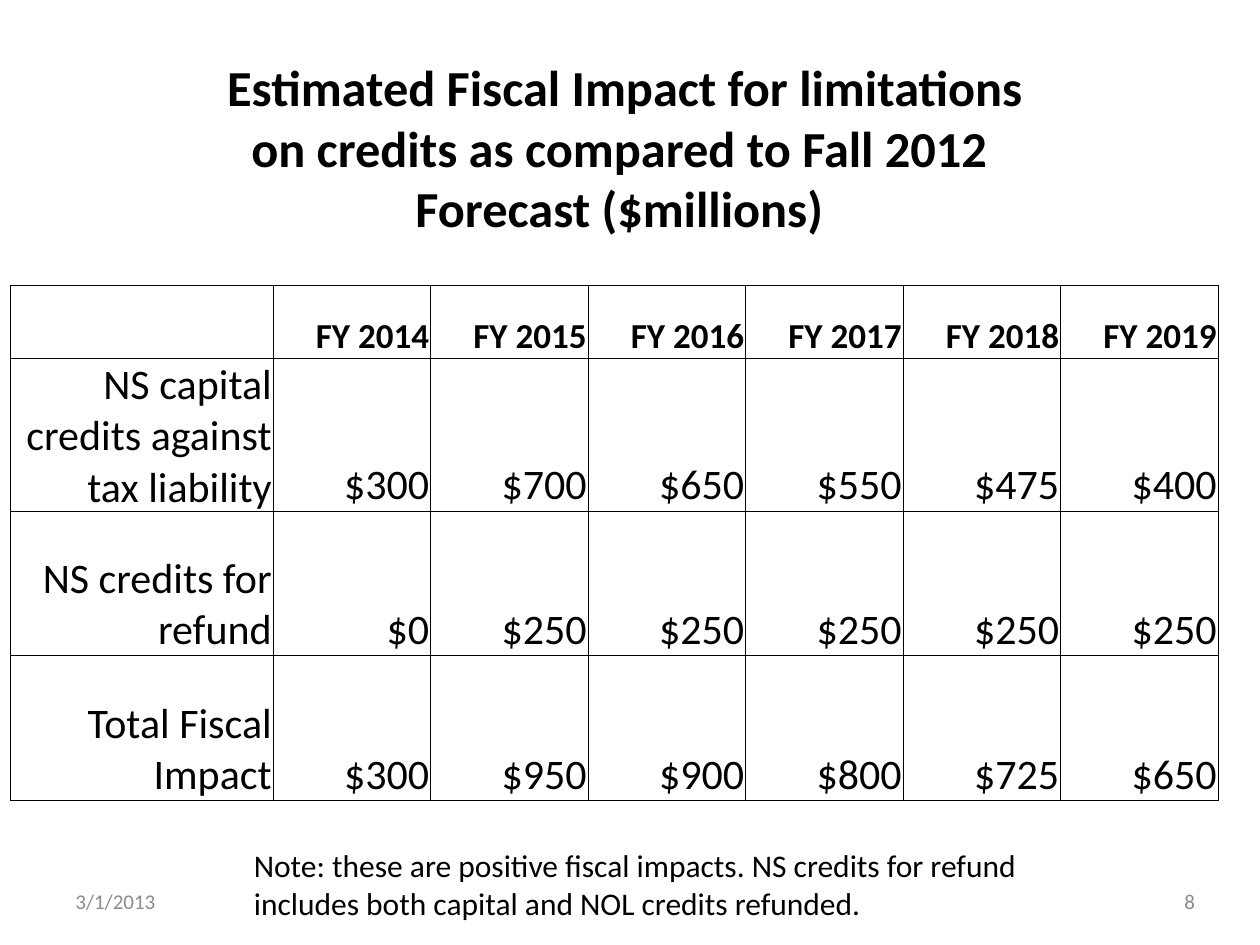
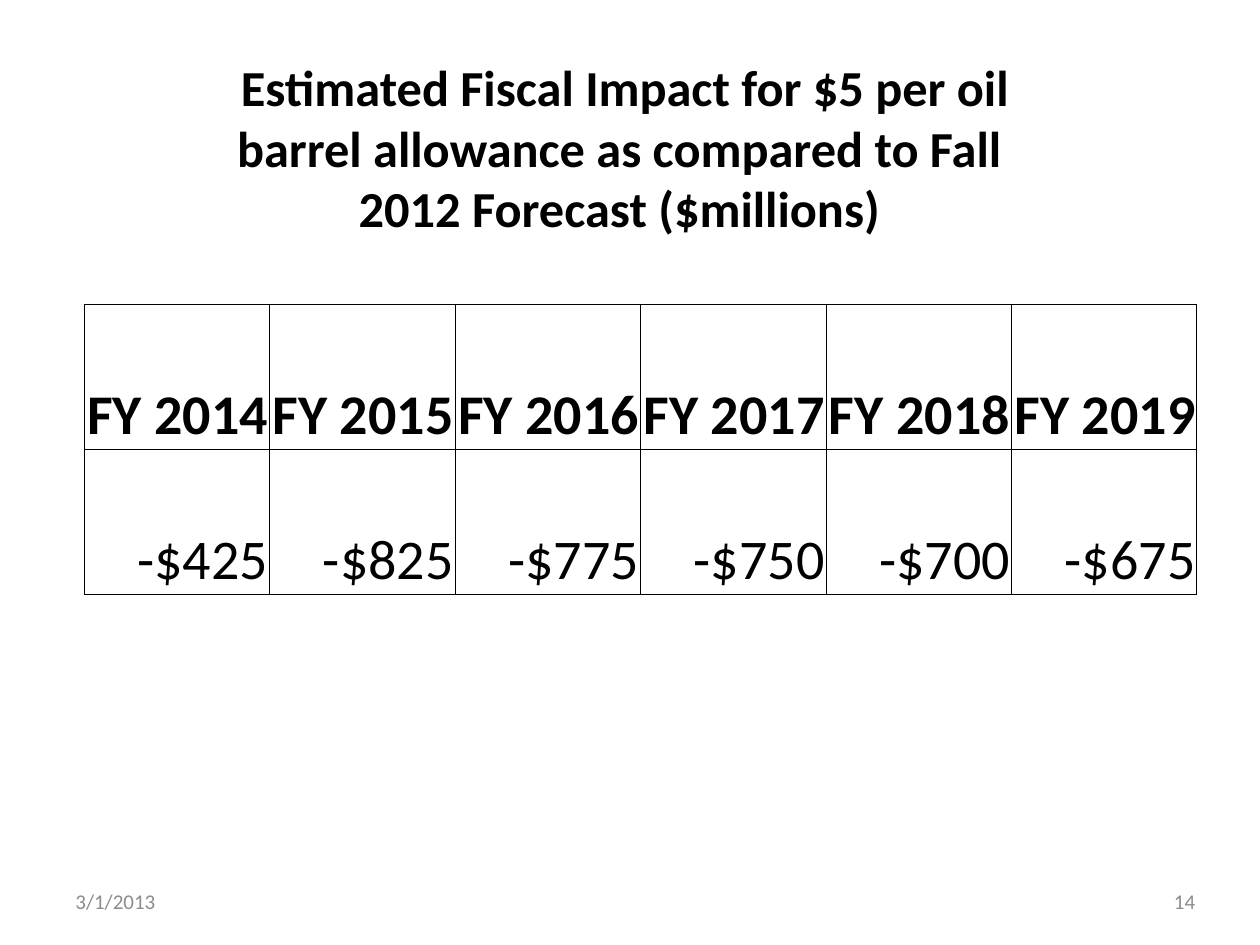
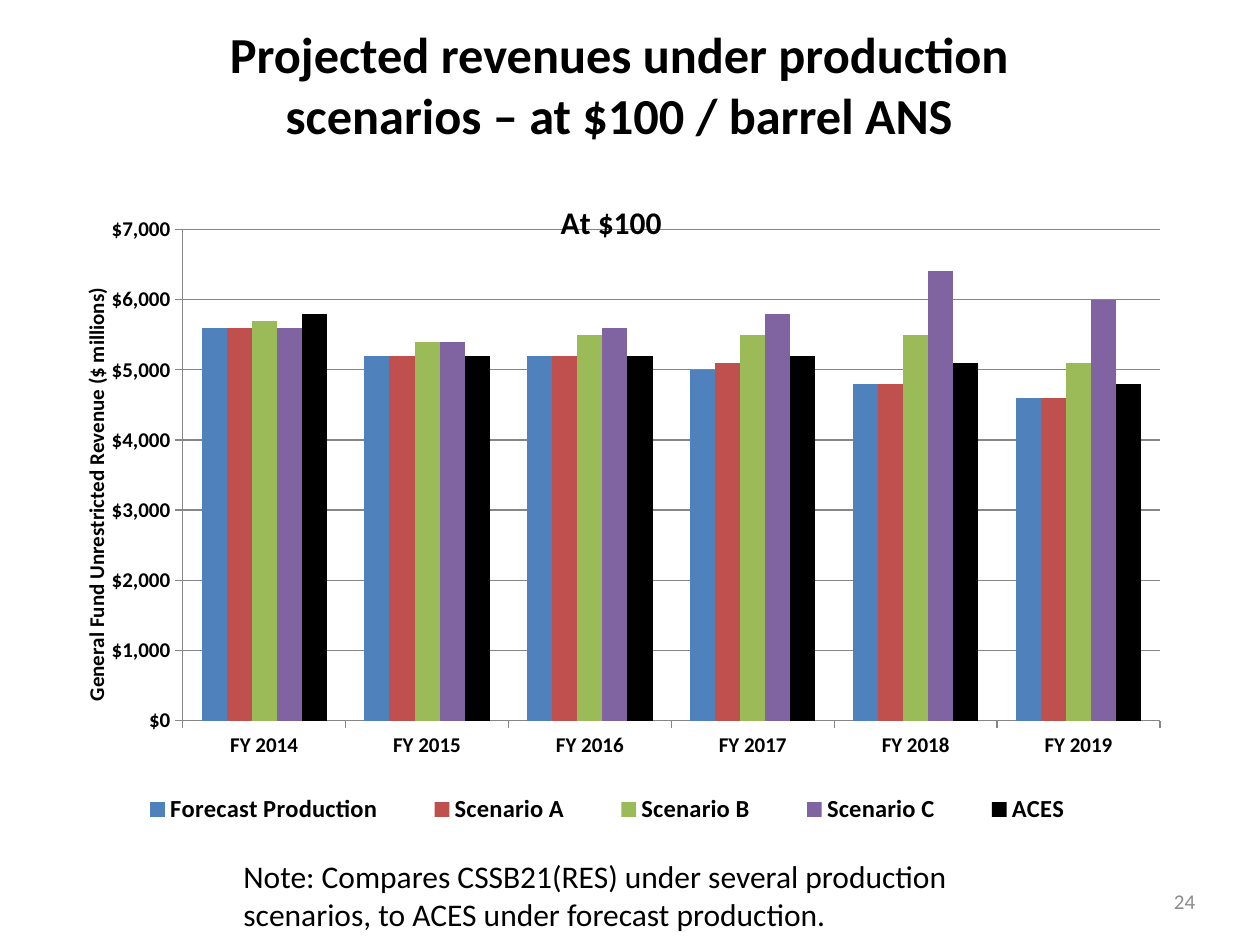
from dataclasses import dataclass

import lxml.etree
import pptx
import pptx.chart.data
import pptx.dml.color
import pptx.enum.chart
import pptx.enum.text
import pptx.oxml
import pptx.oxml.ns
import pptx.util

ALIGN = pptx.enum.text.PP_ALIGN
ANCHOR = pptx.enum.text.MSO_ANCHOR
qualify = pptx.oxml.ns.qn


@dataclass(frozen=True)
class Theme:
    font: str = "Calibri"
    ink: str = "000000"
    paper: str = "FFFFFF"
    muted: str = "8C8C8C"
    rule: str = "868686"
    series: tuple = ("4F81BD", "C0504D", "9BBB59", "8064A2", "000000")
    title: float = 28.8
    note: float = 18
    footer: float = 12
    chart_title: float = 18
    axis: float = 12
    legend: float = 14
    chart_base: float = 10
    border: float = 0.5


THEME = Theme()
COLUMNS, ROWS = 120, 90
WIDTH, HEIGHT = pptx.util.Inches(10), pptx.util.Inches(7.5)
YEARS = [f"FY {year}" for year in range(2014, 2020)]
DATE = "3/1/2013"
DATE_BOX = (6, 83.4, 28, 4.8)
NUMBER_BOX = (87, 83.4, 28, 4.8)


def across(columns):
    return int(WIDTH * columns / COLUMNS)


def down(rows):
    return int(HEIGHT * rows / ROWS)


def place(box):
    left, top, width, height = box
    return across(left), down(top), across(width), down(height)


def color(code):
    return pptx.dml.color.RGBColor.from_string(code)


def style_font(font, size, bold=False, code=THEME.ink):
    font.name = THEME.font
    font.size = pptx.util.Pt(size)
    font.bold = bold
    font.color.rgb = color(code)


def write(frame, text, size, bold=False, code=THEME.ink, align=ALIGN.LEFT):
    paragraph = frame.paragraphs[0]
    paragraph.alignment = align
    run = paragraph.add_run()
    run.text = text
    style_font(run.font, size, bold, code)


def add_text(slide, box, text, size, anchor=ANCHOR.TOP, **style):
    frame = slide.shapes.add_textbox(*place(box)).text_frame
    frame.word_wrap = True
    frame.vertical_anchor = anchor
    write(frame, text, size, **style)


def add_base_slide(presentation, title, title_top, number, date=None):
    slide = presentation.slides.add_slide(presentation.slide_layouts[6])
    add_text(slide, (18, title_top, 82, 10), title, THEME.title, ANCHOR.MIDDLE,
             bold=True, align=ALIGN.CENTER)
    if date:
        add_text(slide, DATE_BOX, date, THEME.footer, ANCHOR.MIDDLE, code=THEME.muted)
    add_text(slide, NUMBER_BOX, number, THEME.footer, ANCHOR.MIDDLE,
             code=THEME.muted, align=ALIGN.RIGHT)
    return slide


def add_borders(cell):
    properties = cell._tc.get_or_add_tcPr()
    for index, side in enumerate(("lnL", "lnR", "lnT", "lnB")):
        line = lxml.etree.Element(qualify(f"a:{side}"), w=str(pptx.util.Pt(THEME.border)))
        fill = lxml.etree.SubElement(line, qualify("a:solidFill"))
        lxml.etree.SubElement(fill, qualify("a:srgbClr"), val=THEME.ink)
        properties.insert(index, line)


def fill_cell(cell, text, size, bold):
    cell.fill.solid()
    cell.fill.fore_color.rgb = color(THEME.paper)
    add_borders(cell)
    if text:
        cell.vertical_anchor = ANCHOR.BOTTOM
        cell.margin_left = cell.margin_right = cell.margin_top = pptx.util.Inches(0.01)
        cell.margin_bottom = 0
        write(cell.text_frame, text, size, bold, align=ALIGN.RIGHT)


def add_impact_table(slide, left, top, widths, heights, records, header_size, body_size):
    box = (left, top, sum(widths), sum(heights))
    table = slide.shapes.add_table(len(heights), len(widths), *place(box)).table
    table.first_row = table.horz_banding = False
    for column, width in zip(table.columns, widths):
        column.width = across(width)
    for row, height in zip(table.rows, heights):
        row.height = down(height)
    for row_index, record in enumerate(records):
        header = row_index == 0
        for column_index, text in enumerate(record):
            fill_cell(table.cell(row_index, column_index), text,
                      header_size if header else body_size, header)


def set_layout(parent, position, **shares):
    old = parent.find(qualify("c:layout"))
    if old is not None:
        parent.remove(old)
    layout = lxml.etree.Element(qualify("c:layout"))
    manual = lxml.etree.SubElement(layout, qualify("c:manualLayout"))
    if "inner" in shares:
        lxml.etree.SubElement(manual, qualify("c:layoutTarget"), val=shares.pop("inner"))
    for mode in ("xMode", "yMode"):
        lxml.etree.SubElement(manual, qualify(f"c:{mode}"), val="edge")
    for name, share in shares.items():
        lxml.etree.SubElement(manual, qualify(f"c:{name}"), val=str(share))
    parent.insert(position, layout)


def style_axis(axis):
    style_font(axis.tick_labels.font, THEME.axis, True)
    axis.major_tick_mark = pptx.enum.chart.XL_TICK_MARK.OUTSIDE
    axis.format.line.color.rgb = color(THEME.rule)


def add_revenue_chart(slide, box, scenarios):
    data = pptx.chart.data.CategoryChartData(number_format='"$"#,##0')
    data.categories = YEARS
    for name, values in scenarios.items():
        data.add_series(name, values)
    kind = pptx.enum.chart.XL_CHART_TYPE.COLUMN_CLUSTERED
    chart = slide.shapes.add_chart(kind, *place(box), data).chart
    style_font(chart.font, THEME.chart_base)

    write(chart.chart_title.text_frame, "At $100", THEME.chart_title, True, align=ALIGN.CENTER)
    chart.chart_title.include_in_layout = True
    set_layout(chart.chart_title._element, 1, x=0.45, y=0.04)

    plot = chart.plots[0]
    plot.gap_width = 150
    plot.overlap = 0
    plot.vary_by_categories = False
    for series, code in zip(plot.series, THEME.series):
        series.format.fill.solid()
        series.format.fill.fore_color.rgb = color(code)
        series.invert_if_negative = False
    set_layout(chart._chartSpace.chart.plotArea, 0, inner="inner",
               x=0.13, y=0.09, w=0.84, h=0.72)

    style_axis(chart.category_axis)
    value_axis = chart.value_axis
    style_axis(value_axis)
    value_axis.minimum_scale, value_axis.maximum_scale = 0, 7000
    value_axis.major_unit = 1000
    value_axis.tick_labels.number_format = '"$"#,##0'
    value_axis.tick_labels.number_format_is_linked = False
    value_axis.major_gridlines.format.line.color.rgb = color(THEME.rule)
    write(value_axis.axis_title.text_frame, "General Fund Unrestricted Revenue ($ millions)",
          THEME.axis, True, align=ALIGN.CENTER)
    set_layout(value_axis.axis_title._element, 1, x=0.04, y=0.17)

    chart.has_legend = True
    chart.legend.position = pptx.enum.chart.XL_LEGEND_POSITION.RIGHT
    chart.legend.include_in_layout = False
    style_font(chart.legend.font, THEME.legend, True)
    set_layout(chart.legend._element, 1, x=0.06, y=0.9, w=0.87, h=0.08)


def add_credit_limits_slide(presentation):
    slide = add_base_slide(
        presentation,
        " Estimated Fiscal Impact for limitations on credits as compared to "
        "Fall 2012 Forecast ($millions)", 9, "8", DATE)
    records = [
        ["", *YEARS],
        ["NS capital credits against tax liability",
         "$300", "$700", "$650", "$550", "$475", "$400"],
        ["NS credits for refund", "$0"] + ["$250"] * 5,
        ["Total Fiscal Impact", "$300", "$950", "$900", "$800", "$725", "$650"],
    ]
    add_impact_table(slide, 1, 27.14, [25] + [15] * 6, [7] + [13.8] * 3, records, 20, 24)
    add_text(slide, (23, 80, 85, 8.5),
             "Note: these are positive fiscal impacts. NS credits for refund "
             "includes both capital and NOL credits refunded.", THEME.note)


def add_barrel_allowance_slide(presentation):
    slide = add_base_slide(
        presentation,
        " Estimated Fiscal Impact for $5 per oil barrel allowance as compared to "
        "Fall 2012 Forecast ($millions)", 9, "14", DATE)
    records = [YEARS, ["-$425", "-$825", "-$775", "-$750", "-$700", "-$675"]]
    add_impact_table(slide, 8, 29, [106 / 6] * 6, [13.8] * 2, records, 32, 32)


def add_scenarios_slide(presentation):
    slide = add_base_slide(
        presentation,
        "Projected revenues under production scenarios – at $100 / barrel ANS", 3, "24")
    add_text(slide, (22, 81, 80, 8.5),
             "Note: Compares CSSB21(RES) under several production scenarios, "
             "to ACES under forecast production.", THEME.note)
    add_revenue_chart(slide, (3, 16, 110.8, 65), {
        "Forecast Production": (5600, 5200, 5200, 5000, 4800, 4600),
        "Scenario A": (5600, 5200, 5200, 5100, 4800, 4600),
        "Scenario B": (5700, 5400, 5500, 5500, 5500, 5100),
        "Scenario C": (5600, 5400, 5600, 5800, 6400, 6000),
        "ACES": (5800, 5200, 5200, 5200, 5100, 4800),
    })


def main():
    presentation = pptx.Presentation()
    presentation.slide_width, presentation.slide_height = WIDTH, HEIGHT
    add_credit_limits_slide(presentation)
    add_barrel_allowance_slide(presentation)
    add_scenarios_slide(presentation)
    presentation.save("out.pptx")


if __name__ == "__main__":
    main()
